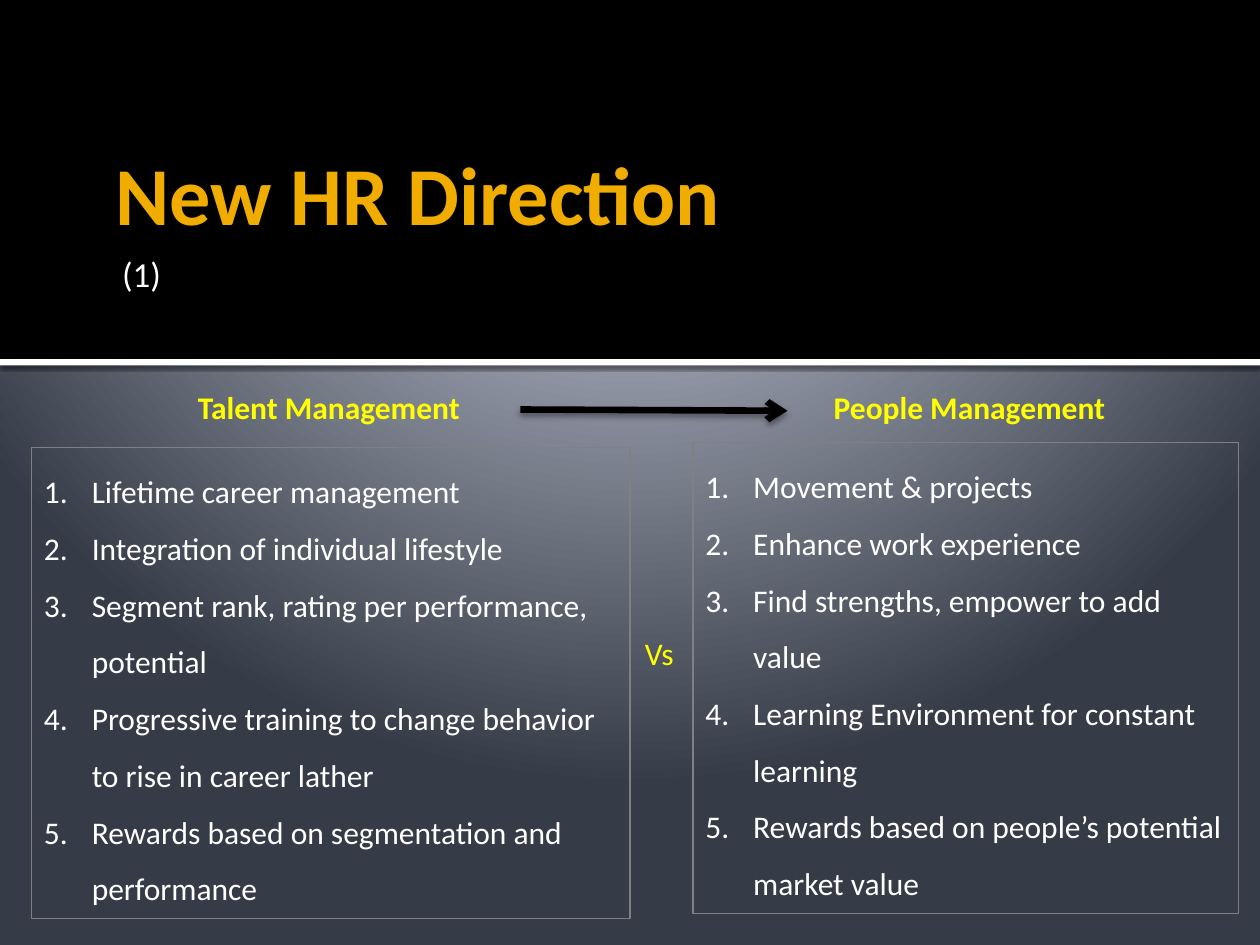
from lxml import etree
from pptx import Presentation
from pptx.dml.color import RGBColor
from pptx.enum.shapes import MSO_CONNECTOR, MSO_SHAPE
from pptx.enum.text import MSO_ANCHOR, MSO_AUTO_SIZE, PP_ALIGN
from pptx.oxml import parse_xml
from pptx.oxml.ns import qn
from pptx.util import Inches, Pt

NS = 'xmlns:a="http://schemas.openxmlformats.org/drawingml/2006/main"'
rgb = RGBColor.from_string


def add_text(box, lines, size, color, bold=False, align=PP_ALIGN.LEFT):
    tf = box.text_frame
    tf.word_wrap = True
    tf.vertical_anchor = MSO_ANCHOR.TOP
    tf.text = "\n".join(lines)
    for p in tf.paragraphs:
        p.alignment = align
        f = p.runs[0].font
        f.name, f.size, f.bold = "Calibri", Pt(size), bold
        f.color.rgb = rgb(color)
    return tf


def add_shadow(shape, alpha, blur, dist):
    spPr = shape._element.spPr
    for old in spPr.findall(qn("a:effectLst")):
        spPr.remove(old)
    spPr.append(parse_xml(
        f'<a:effectLst {NS}><a:outerShdw blurRad="{Pt(blur)}" dist="{Pt(dist)}" dir="5400000" '
        f'rotWithShape="0"><a:srgbClr val="000000"><a:alpha val="{alpha * 1000}"/>'
        f'</a:srgbClr></a:outerShdw></a:effectLst>'))


prs = Presentation()
prs.slide_width, prs.slide_height = Inches(10), Inches(7.5)
s = prs.slides.add_slide(prs.slide_layouts[6])

s.background.fill.solid()
solid = s._element.find(".//" + qn("p:bgPr")).find(qn("a:solidFill"))
stops = "".join(
    f'<a:gs pos="{pos * 1000}"><a:srgbClr val="{color}"/></a:gs>'
    for pos, color in [(0, "C1C5D3"), (12, "C1C5D3"), (20, "BFC4D2"), (100, "353B47")])
solid.getparent().replace(solid, parse_xml(
    f'<a:gradFill {NS} rotWithShape="1"><a:gsLst>{stops}</a:gsLst><a:path path="circle">'
    '<a:fillToRect l="10000" t="-25000" r="10000" b="125000"/></a:path></a:gradFill>'))

for top, height, color in [(0, 2.85, "000000"), (2.85, 0.05, "FFFFFF")]:
    band = s.shapes.add_shape(MSO_SHAPE.RECTANGLE, 0, Inches(top), Inches(10), Inches(height))
    band.shadow.inherit = False
    band.fill.solid()
    band.fill.fore_color.rgb = rgb(color)
    band.line.fill.background()
add_shadow(band, 60, 2.5, 0.8)

title = s.shapes.add_textbox(Inches(0.82), Inches(0.13), Inches(8.76), Inches(1.79))
tf = add_text(title, ["New HR Direction"], 47, "F0AD00", bold=True)
tf.vertical_anchor = MSO_ANCHOR.BOTTOM
tf.margin_top = tf.margin_bottom = 0

subtitle = s.shapes.add_textbox(Inches(0.81), Inches(2), Inches(8.77), Inches(0.75))
tf = add_text(subtitle, ["(1)"], 20, "FFFFFF")
tf.margin_left, tf.margin_right = Inches(0.16), Inches(0.05)
tf.margin_top = tf.margin_bottom = 0

lists = [
    (5.5, 3.51, 4.33, [
        "Movement & projects",
        "Enhance work experience",
        "Find strengths, empower to add value",
        "Learning Environment for constant learning",
        "Rewards based on people’s potential market value"]),
    (0.25, 3.55, 4.75, [
        "Lifetime career management",
        "Integration of individual lifestyle",
        "Segment rank, rating per performance, potential",
        "Progressive training to change behavior to rise in career lather",
        "Rewards based on segmentation and performance"]),
]
for left, top, width, items in lists:
    sp = s.shapes.add_shape(MSO_SHAPE.RECTANGLE, Inches(left), Inches(top), Inches(width), Inches(3.74))
    sp.shadow.inherit = False
    sp.fill.background()
    sp.line.color.rgb = rgb("808080")
    sp.line.width = Pt(0.75)
    tf = add_text(sp, items, 18, "FFFFFF")
    tf.auto_size = MSO_AUTO_SIZE.SHAPE_TO_FIT_TEXT
    for p in tf.paragraphs:
        p.line_spacing = 1.5
        pPr = p._p.get_or_add_pPr()
        pPr.set("marL", str(Inches(0.38)))
        pPr.set("indent", str(-Inches(0.38)))
        etree.SubElement(pPr, qn("a:buFont"), typeface="+mj-lt")
        etree.SubElement(pPr, qn("a:buAutoNum"), type="arabicPeriod")

labels = [
    ("Talent Management", 0.67, 3.03, 3.88, True, PP_ALIGN.CENTER),
    ("People Management", 5.77, 3.03, 3.85, True, PP_ALIGN.CENTER),
    ("Vs", 5.02, 4.98, 0.45, False, PP_ALIGN.LEFT),
]
for text, left, top, width, bold, align in labels:
    box = s.shapes.add_textbox(Inches(left), Inches(top), Inches(width), Inches(0.4))
    tf = add_text(box, [text], 18, "FFFF00", bold, align)
    tf.auto_size = MSO_AUTO_SIZE.SHAPE_TO_FIT_TEXT
tf.word_wrap = False

arrow = s.shapes.add_connector(
    MSO_CONNECTOR.STRAIGHT, Inches(4.13), Inches(3.25), Inches(6.25), Inches(3.26))
arrow.line.color.rgb = rgb("000000")
arrow.line.width = Pt(3.78)
etree.SubElement(arrow._element.spPr.find(qn("a:ln")), qn("a:tailEnd"), type="arrow")
add_shadow(arrow, 38, 3.5, 2)

prs.save("out.pptx")
